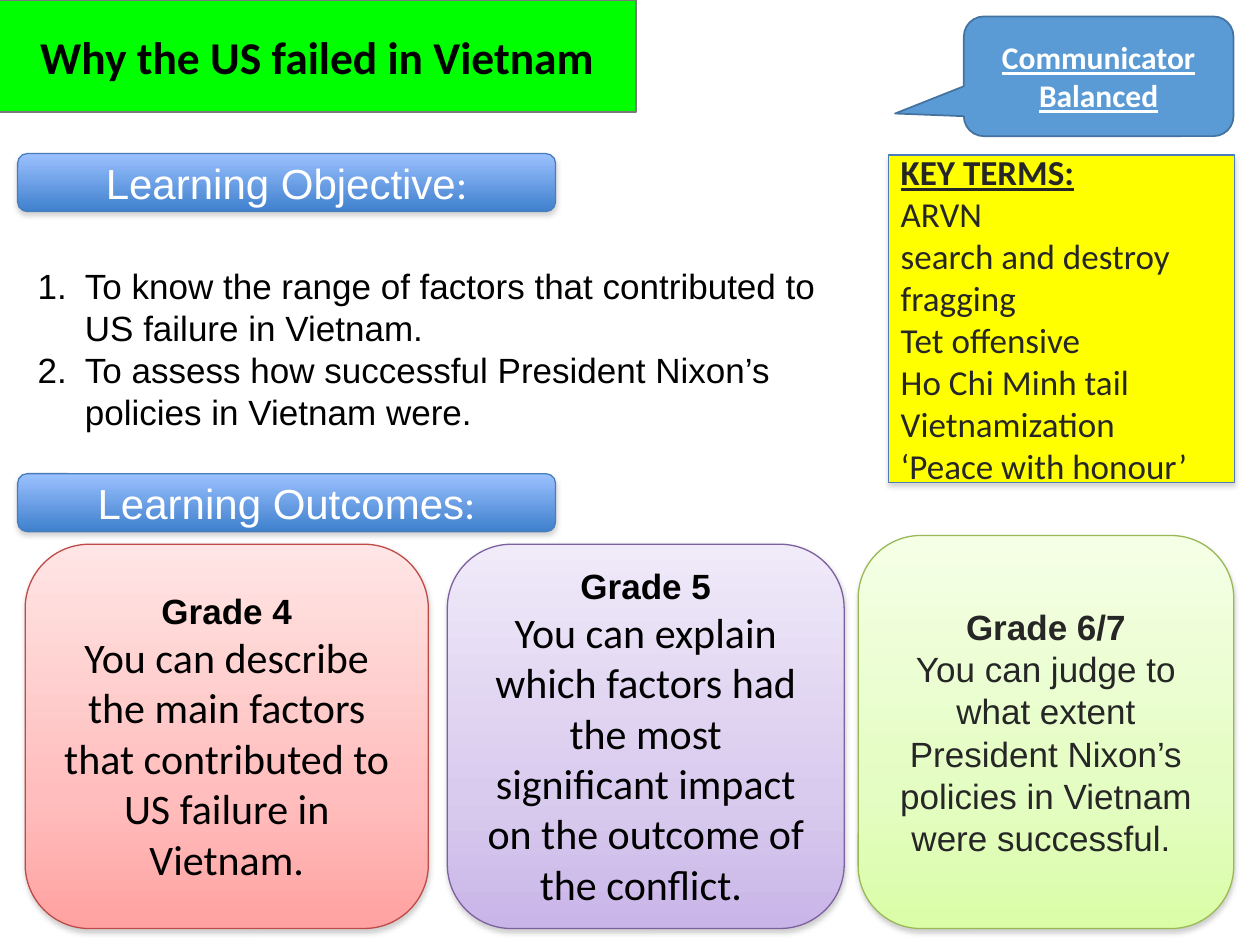
from dataclasses import dataclass

from lxml.etree import SubElement
from pptx import Presentation
from pptx.dml.color import RGBColor
from pptx.enum.shapes import MSO_SHAPE as Shape
from pptx.enum.text import MSO_ANCHOR as Anchor, MSO_AUTO_SIZE as AutoSize, PP_ALIGN as Align
from pptx.oxml.ns import qn
from pptx.util import Pt


@dataclass(frozen=True)
class Theme:
    sans: str = "Arial"
    body: str = "Calibri"
    title_size: int = 26
    large: int = 24
    medium: int = 20
    small: int = 18
    black: str = "000000"
    dark: str = "262626"
    white: str = "FFFFFF"
    title_fill: str = "00FF00"
    title_line: str = "7A7A7A"
    callout_fill: str = "5B9BD5"
    callout_line: str = "43739E"
    terms_fill: str = "FFFF00"
    blue_line: str = "4A7EBB"
    shadow: str = "808080"
    bar: tuple = ((0, "9BC1FF"), (100, "3F80CD"))
    red: tuple = ((0, "FFE5E5"), (65, "FFBEBD"), (100, "FFA2A1"))
    purple: tuple = ((0, "F0EAF9"), (65, "D9CBEE"), (100, "C9B5E8"))
    green: tuple = ((0, "F5FFE6"), (65, "E4FDC2"), (100, "DAFDA7"))


T = Theme()

# Content
TITLE = "Why the US failed in Vietnam"
SKILLS = ["Communicator", "Balanced"]
SECTIONS = [("Learning Objective", 87.8), ("Learning Outcomes", 270.7)]  # label, top
OBJECTIVES = [
    "To know the range of factors that contributed to US failure in Vietnam.",
    "To assess how successful President Nixon’s policies in Vietnam were.",
]
TERMS_HEADING = "KEY TERMS:"
TERMS = ["ARVN", "search and destroy", "fragging", "Tet offensive",
         "Ho Chi Minh tail", "Vietnamization", "‘Peace with honour’"]
LARGE_BODY = dict(font=T.body, size=T.large)
GRADES = [  # heading, outcome, outcome format, text colour, gradient, line, left, top, width
    ("Grade 4", "You can describe the main factors that contributed to US failure in Vietnam.",
     LARGE_BODY, T.black, T.red, "BE4B48", 14.4, 311, 230.4),
    ("Grade 5", "You can explain which factors had the most significant impact "
     "on the outcome of the conflict. ",
     LARGE_BODY, T.black, T.purple, "7D60A0", 255.6, 311, 226.8),
    ("Grade 6/7", "You can judge to what extent President Nixon’s policies in Vietnam "
     "were successful. ",
     {}, T.dark, T.green, "98B954", 490.4, 306, 214.6),
]
GRADES_BOTTOM = 530.6


def write(shape, paragraphs, align=Align.LEFT, anchor=Anchor.MIDDLE, numbered=False, **base):
    """Each paragraph is a list of (text, format) runs; base holds the common format."""
    frame = shape.text_frame
    frame.word_wrap = True
    frame.auto_size = AutoSize.NONE
    frame.vertical_anchor = anchor
    for i, runs in enumerate(paragraphs):
        paragraph = frame.add_paragraph() if i else frame.paragraphs[0]
        paragraph.alignment = align
        if numbered:
            props = paragraph._p.get_or_add_pPr()
            props.set("marL", str(Pt(27)))
            props.set("indent", str(Pt(-27)))
            SubElement(props, qn("a:buFont"), typeface="+mj-lt")
            SubElement(props, qn("a:buAutoNum"), type="arabicPeriod")
        for text, extra in runs:
            style = {**base, **extra}
            run = paragraph.add_run()
            run.text = text
            run.font.name = style["font"]
            run.font.size = Pt(style["size"])
            run.font.bold = style.get("bold", False)
            run.font.underline = style.get("underline", False)
            run.font.color.rgb = RGBColor.from_string(style["color"])


def paint(shape, fill, line, width=0.75, shadow=None):
    """Fill is a colour or a tuple of gradient stops; shadow is (opacity %, distance)."""
    if isinstance(fill, str):
        shape.fill.solid()
        shape.fill.fore_color.rgb = RGBColor.from_string(fill)
    else:
        shape.fill.gradient()
        shape.fill.gradient_angle = 270
        stops = shape._element.spPr.find(".//" + qn("a:gsLst"))
        for stop in list(stops):
            stops.remove(stop)
        for position, color in fill:
            stop = SubElement(stops, qn("a:gs"), pos=str(position * 1000))
            SubElement(stop, qn("a:srgbClr"), val=color)
    shape.line.color.rgb = RGBColor.from_string(line)
    shape.line.width = Pt(width)
    shape.shadow.inherit = False
    if shadow:
        opacity, distance = shadow
        effects = shape._element.spPr.find(qn("a:effectLst"))
        outer = SubElement(effects, qn("a:outerShdw"), blurRad=str(Pt(3.1)),
                           dist=str(Pt(distance)), dir="5400000", rotWithShape="0")
        color = SubElement(outer, qn("a:srgbClr"), val=T.shadow)
        SubElement(color, qn("a:alpha"), val=str(opacity * 1000))


def place(shape, left, top, width, height):
    shape.left, shape.top, shape.width, shape.height = map(Pt, (left, top, width, height))


def add(slide, kind, *box):
    return slide.shapes.add_shape(kind, *map(Pt, box))


def main():
    deck = Presentation()
    deck.slide_width, deck.slide_height = Pt(720), Pt(540)
    slide = deck.slides.add_slide(deck.slide_layouts[5])

    # Title
    title = slide.shapes.title
    place(title, -0.7, 0, 364.3, 64.1)
    outline = SubElement(title._element.spPr, qn("a:prstGeom"), prst="roundRect")
    SubElement(outline, qn("a:avLst"))
    paint(title, T.title_fill, T.title_line, width=1)
    write(title, [[(TITLE, {})]], align=Align.CENTER,
          font=T.body, size=T.title_size, color=T.black, bold=True)

    # Section bars
    for label, top in SECTIONS:
        bar = add(slide, Shape.ROUNDED_RECTANGLE, 10.1, top, 307.4, 33.1)
        paint(bar, T.bar, T.blue_line, shadow=(35, 1.8))
        write(bar, [[(label, {}), (":", dict(font=T.body))]], align=Align.CENTER,
              font=T.sans, size=T.large, color=T.white)

    # Grade cards
    for heading, outcome, style, color, gradient, line, left, top, width in GRADES:
        card = add(slide, Shape.ROUNDED_RECTANGLE, left, top, width, GRADES_BOTTOM - top)
        paint(card, gradient, line, shadow=(38, 1.6))
        write(card, [[(heading, dict(bold=True))], [(outcome, style)]], align=Align.CENTER,
              font=T.sans, size=T.medium, color=color)

    # Objectives
    objectives = slide.shapes.add_textbox(*map(Pt, (14.4, 147.6, 488.2, 128.2)))
    write(objectives, [[(text, {})] for text in OBJECTIVES], anchor=Anchor.TOP, numbered=True,
          font=T.sans, size=T.medium, color=T.black)

    # Key terms
    terms = add(slide, Shape.RECTANGLE, 507.6, 88.6, 198, 187.2)
    paint(terms, T.terms_fill, T.blue_line, shadow=(35, 1.8))
    write(terms, [[(TERMS_HEADING, dict(bold=True, underline=True))]]
          + [[(term, {})] for term in TERMS],
          font=T.body, size=T.medium, color=T.dark)

    # Skills callout
    callout = add(slide, Shape.ROUNDED_RECTANGULAR_CALLOUT, 550.8, 9.4, 154.1, 68.4)
    callout.adjustments[0], callout.adjustments[1] = -0.755, 0.311
    paint(callout, T.callout_fill, T.callout_line, width=1)
    write(callout, [[(skill, {})] for skill in SKILLS], align=Align.CENTER,
          font=T.body, size=T.small, color=T.white, bold=True, underline=True)

    deck.save("out.pptx")


if __name__ == "__main__":
    main()
